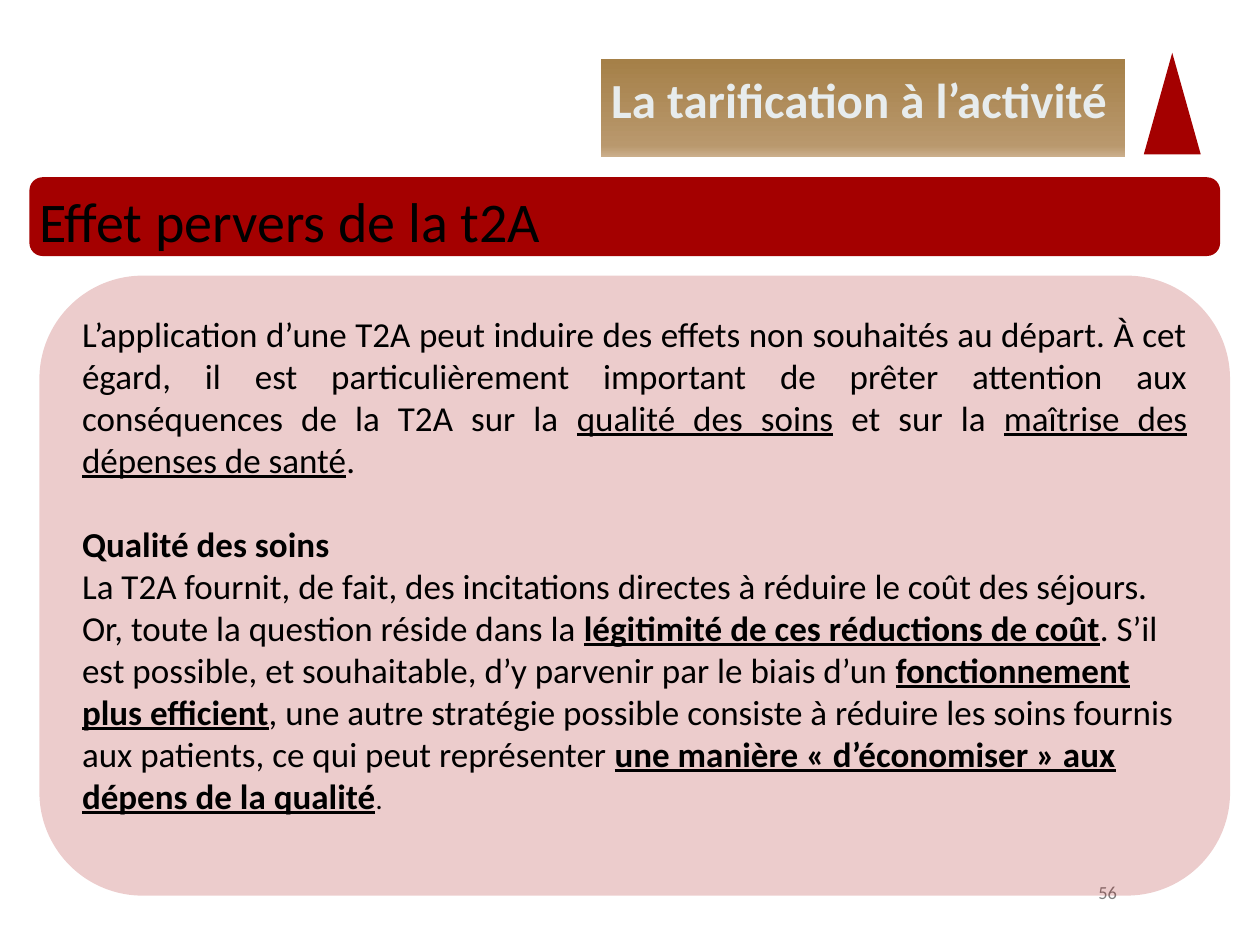
from copy import deepcopy

from lxml.etree import SubElement
from pptx import Presentation
from pptx.dml.color import RGBColor
from pptx.enum.shapes import MSO_SHAPE as SHAPE
from pptx.enum.text import MSO_ANCHOR as ANCHOR, MSO_AUTO_SIZE as AUTO, PP_ALIGN as ALIGN
from pptx.oxml.ns import qn
from pptx.util import Pt

RED = RGBColor(0xA4, 0x00, 0x00)
BLACK = RGBColor(0x00, 0x00, 0x00)
GREY = RGBColor(0x80, 0x80, 0x80)
PALE = RGBColor(0xE7, 0xEC, 0xED)
GOLDS = [(0, RGBColor(0xCC, 0xB0, 0x8E)),
         (0.12, RGBColor(0xB9, 0x98, 0x6D)),
         (1, RGBColor(0xA5, 0x80, 0x48))]
FONT = "Calibri"

INTRO = [
    ("L’application d’une T2A peut induire des effets non souhaités au départ. "
     "À cet égard, il est particulièrement important de prêter attention aux "
     "conséquences de la T2A sur la ", ""),
    ("qualité des soins", "u"),
    (" et sur la ", ""),
    ("maîtrise des dépenses de santé", "u"),
    (".", ""),
]
QUALITY = [
    ("La T2A fournit, de fait, des incitations directes à réduire le coût des "
     "séjours. Or, toute la question réside dans la ", ""),
    ("légitimité de ces réductions de coût", "bu"),
    (". S’il est possible, et souhaitable, d’y parvenir par le biais d’un ", ""),
    ("fonctionnement plus efficient", "bu"),
    (", une autre stratégie possible consiste à réduire les soins fournis aux "
     "patients, ce qui peut représenter ", ""),
    ("une manière « d’économiser » aux dépens de la qualité", "bu"),
]


def add_run(p, text, size, color=BLACK, style=""):
    """Append a run; style holds b for bold and u for underline."""
    r = p.add_run()
    r.text = text
    r.font.name, r.font.size = FONT, Pt(size)
    r.font.color.rgb = color
    r.font.bold, r.font.underline = "b" in style, "u" in style


def set_frame(sp, anchor=ANCHOR.TOP, inset_x=0, inset_y=0):
    """Prepare a wrapping text frame and return it."""
    tf = sp.text_frame
    tf.word_wrap, tf.auto_size = True, AUTO.NONE
    tf.vertical_anchor = anchor
    tf.margin_left = tf.margin_right = Pt(inset_x)
    tf.margin_top = tf.margin_bottom = Pt(inset_y)
    return tf


def add_block(s, kind, x, y, w, h, alpha=None):
    """Add a flat red shape without outline, optionally translucent."""
    sp = s.shapes.add_shape(kind, Pt(x), Pt(y), Pt(w), Pt(h))
    sp.shadow.inherit = False
    sp.fill.solid()
    sp.fill.fore_color.rgb = RED
    sp.line.fill.background()
    if alpha is not None:
        color = sp._element.spPr.find(qn("a:solidFill"))[0]
        SubElement(color, qn("a:alpha")).set("val", str(alpha * 1000))
    return sp


def add_label(s, text, x, y, w, h, size, color, align, anchor):
    """Add a one-line text box."""
    tf = set_frame(s.shapes.add_textbox(Pt(x), Pt(y), Pt(w), Pt(h)), anchor)
    p = tf.paragraphs[0]
    p.alignment = align
    add_run(p, text, size, color)


def fill_gold(sp):
    """Give a shape the three-stop gold gradient, rising from the bottom."""
    sp.fill.gradient()
    sp.fill.gradient_angle = 90
    stops = sp._element.spPr.find(qn("a:gradFill")).find(qn("a:gsLst"))
    stops.append(deepcopy(stops[-1]))
    for stop, (position, color) in zip(sp.fill.gradient_stops, GOLDS):
        stop.position = position
        stop.color.rgb = color


def format_title(sp):
    """Place the title and write its text."""
    sp.left, sp.top, sp.width, sp.height = Pt(343.5), Pt(33.8), Pt(299.5), Pt(56.2)
    fill_gold(sp)
    p = set_frame(sp, ANCHOR.MIDDLE, 4.3, 2.2).paragraphs[0]
    p.alignment, p.line_spacing = ALIGN.RIGHT, 0.6
    add_run(p, "La tarification à l’activité ", 28, PALE, "b")


def add_body(s):
    """Add the pale panel with its three paragraphs."""
    sp = add_block(s, SHAPE.ROUNDED_RECTANGLE, 22.5, 157.5, 680.4, 354.3, alpha=20)
    tf = set_frame(sp, ANCHOR.TOP, 7.2, 3.6)
    paragraphs = [(INTRO, ALIGN.JUSTIFY, 0),
                  ([("Qualité des soins", "b")], ALIGN.JUSTIFY, 24),
                  (QUALITY, ALIGN.LEFT, 0)]
    for i, (runs, align, gap) in enumerate(paragraphs):
        p = tf.add_paragraph() if i else tf.paragraphs[0]
        p.alignment = align
        if gap:
            p.space_before = Pt(gap)
        for text, style in runs:
            add_run(p, text, 20, style=style)
    add_run(p, ".", 16)


def main():
    """Build and save the slide."""
    prs = Presentation()
    prs.slide_width, prs.slide_height = Pt(720), Pt(540)
    s = prs.slides.add_slide(prs.slide_layouts[5])
    format_title(s.shapes.title)
    add_block(s, SHAPE.ISOSCELES_TRIANGLE, 653.6, 30.2, 32.5, 58)
    add_block(s, SHAPE.ROUNDED_RECTANGLE, 16.8, 101.3, 680.4, 45)
    add_label(s, "Effet pervers de la t2A", 22.5, 106.8, 658, 39, 32,
              BLACK, ALIGN.LEFT, ANCHOR.TOP)
    add_label(s, "56", 612, 504, 41.8, 12.2, 10.5,
              GREY, ALIGN.CENTER, ANCHOR.MIDDLE)
    add_body(s)
    prs.save("out.pptx")


if __name__ == "__main__":
    main()
